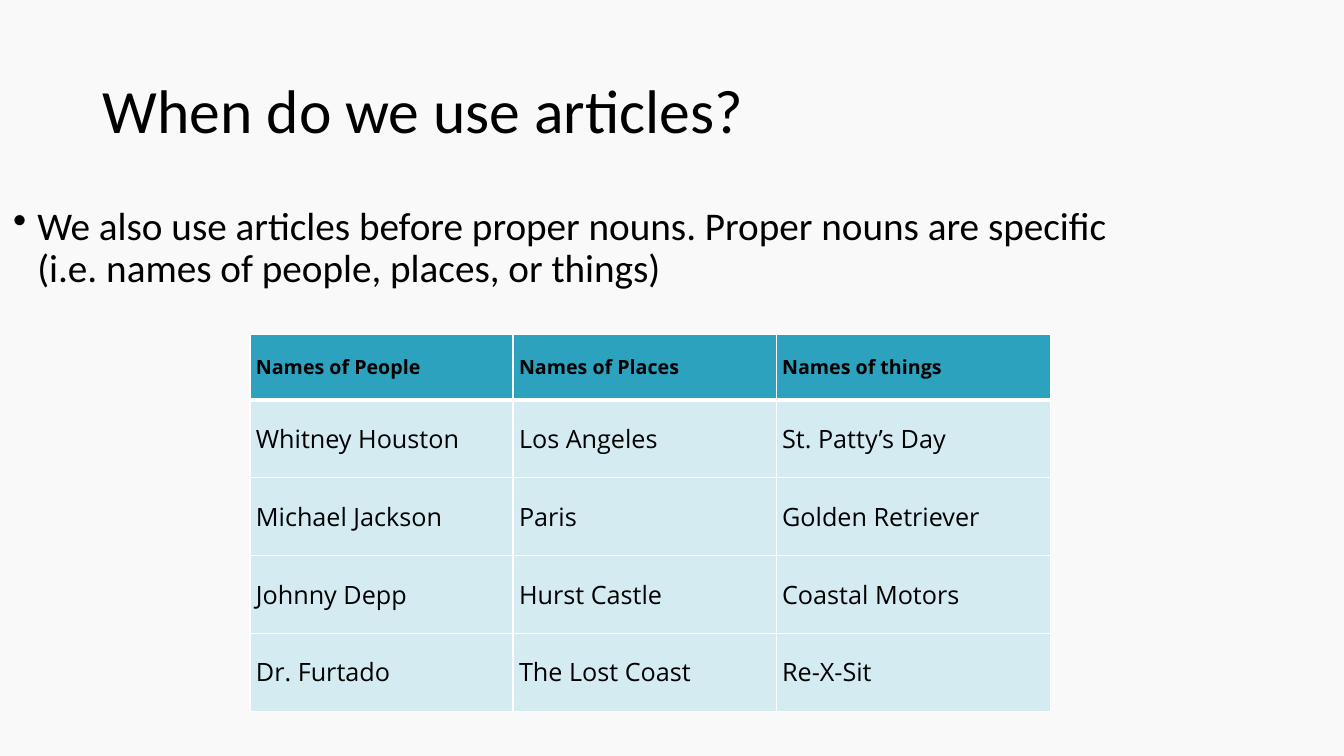
from dataclasses import dataclass

from lxml.etree import SubElement
from pptx import Presentation
from pptx.dml.color import RGBColor
from pptx.enum.text import MSO_ANCHOR
from pptx.oxml.ns import qn
from pptx.util import Cm, Pt


@dataclass(frozen=True)
class Theme:
    background: str = "F9F9F9"
    ink: str = "000000"
    header_fill: str = "2DA2BF"
    body_fill: str = "D3EBF1"
    border: str = "FFFFFF"
    heading_font: str = "Calibri"
    table_font: str = "Open Sans"
    title_size: int = 44
    bullet_size: int = 28
    header_size: int = 14
    cell_size: int = 18
    thin: int = 1
    thick: int = 3


THEME = Theme()

NOUNS = [
    ["Names of People", "Names of Places", "Names of things"],
    ["Whitney Houston", "Los Angeles", "St. Patty’s Day"],
    ["Michael Jackson", "Paris", "Golden Retriever"],
    ["Johnny Depp", "Hurst Castle", "Coastal Motors"],
    ["Dr. Furtado", "The Lost Coast", "Re-X-Sit"],
]
COLUMN_WIDTHS = [Cm(6.63), Cm(6.63), Cm(6.91)]
ROW_HEIGHTS = [Cm(1.65)] + [Cm(1.96)] * 4


def set_all(target, values):
    for name, value in values.items():
        setattr(target, name, value)


def write(p, text, font, size, bold=False):
    r = p.add_run()
    r.text = text
    set_all(r.font, {"name": font, "size": Pt(size), "bold": bold})
    r.font.color.rgb = RGBColor.from_string(THEME.ink)


def add_bullet(p):
    pPr = p._p.get_or_add_pPr()
    pPr.set("marL", str(Cm(0.69)))
    pPr.set("indent", str(-Cm(0.61)))
    SubElement(pPr, qn("a:buChar"), char="•")


def add_text(s, text, box, size, anchor=MSO_ANCHOR.TOP, bullet=False):
    tf = s.shapes.add_textbox(*box).text_frame
    set_all(tf, {"word_wrap": True, "vertical_anchor": anchor})
    p = tf.paragraphs[0]
    if bullet:
        add_bullet(p)
    p.line_spacing = 0.9
    write(p, text, THEME.heading_font, size)


def add_borders(cell, widths):
    """Draw the cell's edges; widths maps L, R, T, B to points, in that order."""
    tcPr = cell._tc.get_or_add_tcPr()
    for side, width in widths.items():
        ln = SubElement(tcPr, qn(f"a:ln{side}"), w=str(Pt(width)))
        fill = SubElement(ln, qn("a:solidFill"))
        SubElement(fill, qn("a:srgbClr"), val=THEME.border)


def format_cell(cell, text, row):
    header = row == 0
    margins = ("margin_left", "margin_right", "margin_top", "margin_bottom")
    set_all(cell, dict.fromkeys(margins, Cm(0.15)))
    cell.vertical_anchor = MSO_ANCHOR.MIDDLE
    add_borders(cell, {
        "L": THEME.thin,
        "R": THEME.thin,
        "T": THEME.thick if row == 1 else THEME.thin,
        "B": THEME.thick if header else THEME.thin,
    })
    cell.fill.solid()
    cell.fill.fore_color.rgb = RGBColor.from_string(
        THEME.header_fill if header else THEME.body_fill)
    write(cell.text_frame.paragraphs[0], text, THEME.table_font,
          THEME.header_size if header else THEME.cell_size, bold=header)


def add_noun_table(s, left, top):
    table = s.shapes.add_table(len(NOUNS), len(COLUMN_WIDTHS), left, top,
                               sum(COLUMN_WIDTHS), sum(ROW_HEIGHTS)).table
    set_all(table, {"first_row": True, "horz_banding": False})
    for column, width in zip(table.columns, COLUMN_WIDTHS):
        column.width = width
    for i, (row, height) in enumerate(zip(table.rows, ROW_HEIGHTS)):
        row.height = height
        for cell, text in zip(row.cells, NOUNS[i]):
            format_cell(cell, text, i)


def main():
    prs = Presentation()
    set_all(prs, {"slide_width": Cm(33.87), "slide_height": Cm(19.05)})
    s = prs.slides.add_slide(prs.slide_layouts[6])
    s.background.fill.solid()
    s.background.fill.fore_color.rgb = RGBColor.from_string(THEME.background)

    add_text(s, "When do we use articles?",
             (Cm(2.34), Cm(1.02), Cm(29.21), Cm(3.68)),
             THEME.title_size, anchor=MSO_ANCHOR.MIDDLE)
    add_text(s, "We also use articles before proper nouns. Proper nouns are "
                "specific (i.e. names of people, places, or things)",
             (Cm(0), Cm(5.08), Cm(29.21), Cm(12.09)),
             THEME.bullet_size, bullet=True)
    add_noun_table(s, Cm(6.3), Cm(8.43))
    prs.save("out.pptx")


if __name__ == "__main__":
    main()
